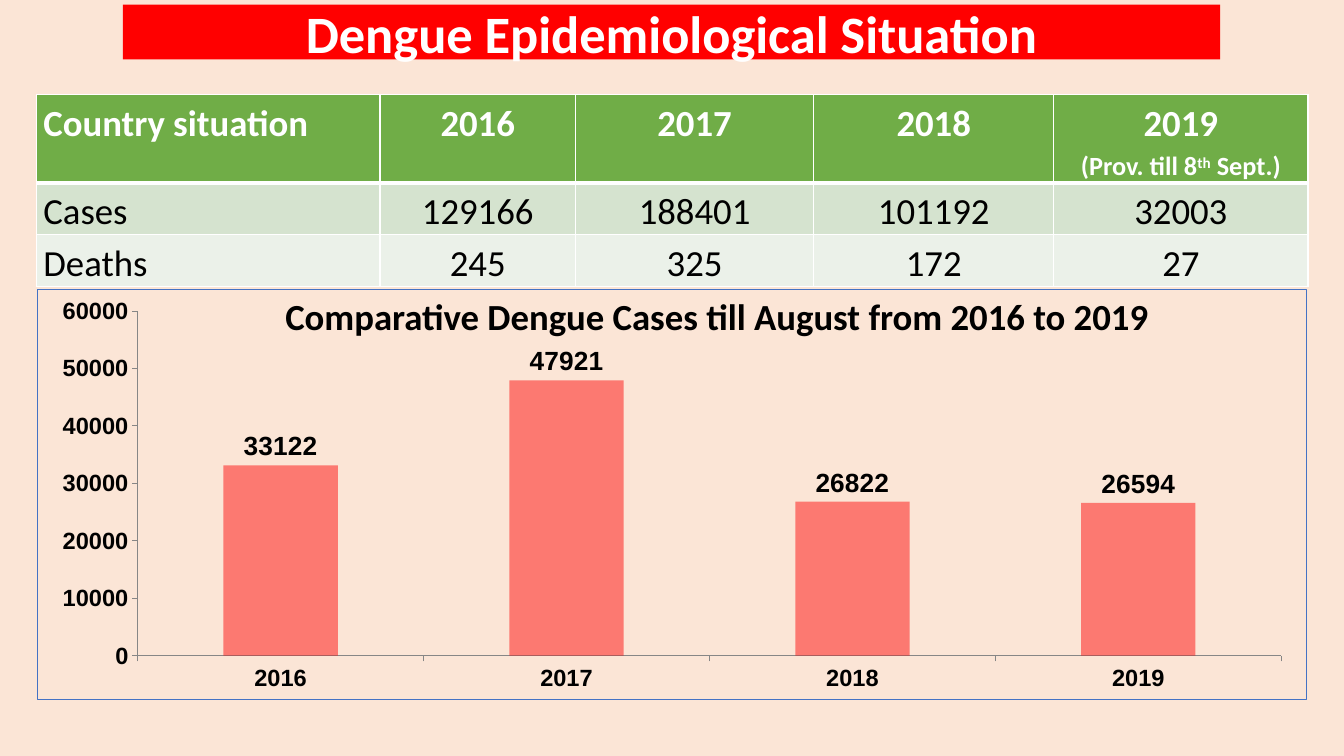
from lxml import etree
from pptx import Presentation
from pptx import util as u
from pptx.chart import data
from pptx.dml.color import RGBColor
from pptx.enum import chart as ch, text
from pptx.oxml import ns, parse_xml

PEACH = RGBColor(0xFB, 0xE5, 0xD6)
RED = RGBColor(0xFF, 0x00, 0x00)
WHITE = RGBColor(0xFF, 0xFF, 0xFF)
BLACK = RGBColor(0x00, 0x00, 0x00)
GREEN = RGBColor(0x70, 0xAD, 0x47)
LIGHT_GREEN = RGBColor(0xD5, 0xE3, 0xCF)
PALE_GREEN = RGBColor(0xEB, 0xF1, 0xE9)
BLUE = RGBColor(0x44, 0x72, 0xC4)
GREY = RGBColor(0x86, 0x86, 0x86)

LEFT, CENTER, JUSTIFY = (
    text.PP_ALIGN.LEFT, text.PP_ALIGN.CENTER, text.PP_ALIGN.JUSTIFY)
YEARS = ["2016", "2017", "2018", "2019"]


def add_text(p, content, size=28, color=BLACK, bold=False, font="Calibri",
             align=LEFT, spacing=1.0, baseline=0):
    p.alignment = align
    p.line_spacing = spacing
    r = p.add_run()
    r.text = content
    r.font.size = u.Pt(size)
    r.font.name = font
    r.font.bold = bold
    r.font.color.rgb = color
    if baseline:
        r.font._element.set("baseline", str(baseline))
    return r


def border_xml(tag, color, width):
    return parse_xml(
        f'<a:{tag} {ns.nsdecls("a")} w="{u.Pt(width)}"><a:solidFill>'
        f'<a:srgbClr val="{color}"/></a:solidFill></a:{tag}>')


class DengueSlide:
    def __init__(self, prs):
        self.s = prs.slides.add_slide(prs.slide_layouts[5])
        self.s.background.fill.solid()
        self.s.background.fill.fore_color.rgb = PEACH

    def title(self, content, x, y, w, h):
        sp = self.s.shapes.title
        sp.left, sp.top, sp.width, sp.height = map(u.Inches, (x, y, w, h))
        sp.fill.solid()
        sp.fill.fore_color.rgb = RED
        tf = sp.text_frame
        tf.vertical_anchor = text.MSO_ANCHOR.MIDDLE
        tf.auto_size = text.MSO_AUTO_SIZE.NONE
        add_text(tf.paragraphs[0], content, size=40, color=WHITE, bold=True,
                 align=CENTER)

    def textbox(self, content, x, y, w, h):
        sp = self.s.shapes.add_textbox(*map(u.Inches, (x, y, w, h)))
        tf = sp.text_frame
        tf.word_wrap = False
        tf.auto_size = text.MSO_AUTO_SIZE.SHAPE_TO_FIT_TEXT
        add_text(tf.paragraphs[0], content, bold=True)

    def cell(self, cell, content, fill, bottom=1, **fmt):
        cell.margin_left = cell.margin_right = u.Inches(0.07)
        cell.margin_top = cell.margin_bottom = 0
        cell.fill.solid()
        cell.fill.fore_color.rgb = fill
        tc_pr = cell._tc.get_or_add_tcPr()
        widths = {"lnL": 1, "lnR": 1, "lnT": 1, "lnB": bottom}
        for i, (tag, width) in enumerate(widths.items()):
            tc_pr.insert(i, border_xml(tag, WHITE, width))
        add_text(cell.text_frame.paragraphs[0], content, spacing=1.15, **fmt)

    def table(self, rows, x, y, widths, heights):
        frame = self.s.shapes.add_table(
            len(rows), len(widths), u.Inches(x), u.Inches(y),
            u.Inches(sum(widths)), u.Inches(sum(heights)))
        tbl = frame.table
        for column, width in zip(tbl.columns, widths):
            column.width = u.Inches(width)
        for row, height in zip(tbl.rows, heights):
            row.height = u.Inches(height)
        for i, (fill, values) in enumerate(rows):
            header = i == 0
            for j, value in enumerate(values):
                first = LEFT if header else JUSTIFY
                self.cell(tbl.cell(i, j), value, fill, bottom=3 if header else 1,
                          color=WHITE if header else BLACK, bold=header,
                          align=CENTER if j else first)
        return tbl

    def chart(self, values, x, y, w, h):
        cd = data.CategoryChartData()
        cd.categories = YEARS
        cd.add_series("Series 1", values)
        chart = self.s.shapes.add_chart(
            ch.XL_CHART_TYPE.COLUMN_CLUSTERED,
            *map(u.Inches, (x, y, w, h)), cd).chart
        chart.has_legend = chart.has_title = False
        chart.font.size = u.Pt(16)
        chart.font.name = "Arial"
        chart.font.bold = True
        chart.font.color.rgb = BLACK
        for axis in (chart.category_axis, chart.value_axis):
            axis.has_major_gridlines = False
            axis.major_tick_mark = ch.XL_TICK_MARK.OUTSIDE
            axis.tick_labels.font.size = u.Pt(18)
            axis.format.line.color.rgb = GREY
        chart.value_axis.minimum_scale = 0
        chart.value_axis.maximum_scale = 60000
        chart.value_axis.major_unit = 10000

        plot = chart.plots[0]
        plot.gap_width = 150
        plot.vary_by_categories = False
        series = plot.series[0]
        series.format.fill.solid()
        series.format.fill.fore_color.rgb = RED
        color = series._element.find(".//" + ns.qn("a:srgbClr"))
        etree.SubElement(color, ns.qn("a:alpha"), val="47000")
        labels = series.data_labels
        labels.show_value = True
        labels.position = ch.XL_LABEL_POSITION.OUTSIDE_END
        labels.font.size = u.Pt(20)
        labels.font.bold = True

        frame = parse_xml(f'<c:spPr {ns.nsdecls("c", "a")}><a:noFill/></c:spPr>')
        frame.append(border_xml("ln", BLUE, 0.75))
        chart._chartSpace.find(ns.qn("c:chart")).addnext(frame)


def main():
    prs = Presentation()
    prs.slide_width, prs.slide_height = u.Inches(14.22), u.Inches(8)
    slide = DengueSlide(prs)
    slide.title("Dengue Epidemiological Situation", 1.3, 0.05, 11.61, 0.58)
    tbl = slide.table(
        [(GREEN, ["Country situation", *YEARS]),
         (LIGHT_GREEN, ["Cases", "129166", "188401", "101192", "32003"]),
         (PALE_GREEN, ["Deaths", "245", "325", "172", "27"])],
        0.39, 1, [3.63, 2.07, 2.52, 2.54, 2.69], [0.74, 0.43, 0.43])
    p = tbl.cell(0, 4).text_frame.add_paragraph()
    for content, baseline in (("(Prov. till 8", 0), ("th", 30000), (" Sept.)", 0)):
        add_text(p, content, size=20, color=WHITE, bold=True, align=CENTER,
                 spacing=1.15, baseline=baseline)
    slide.chart([33122, 47921, 26822, 26594], 0.39, 3.06, 13.44, 4.35)
    slide.textbox("Comparative Dengue Cases till August from 2016 to 2019",
                  2.92, 3.06, 9.45, 0.57)
    prs.save("out.pptx")


if __name__ == "__main__":
    main()
